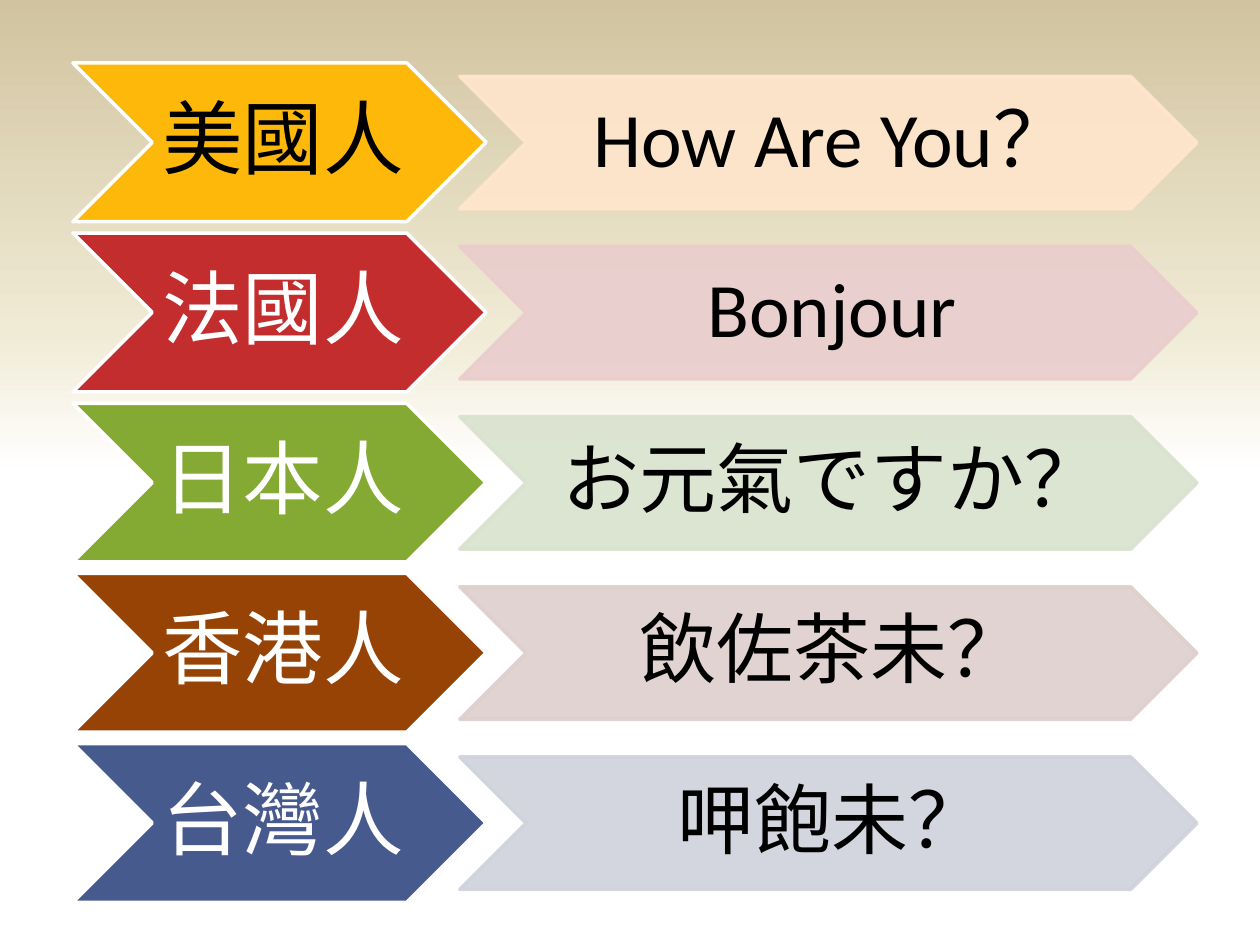
from copy import deepcopy

from pptx import Presentation, util as u
from pptx.dml.color import RGBColor
from pptx.enum import shapes, text
from pptx.oxml.ns import qn
from lxml import etree

HUES = {
    "white": "FFFFFF", "black": "000000", "cream": "F0EBD5", "sand": "D1C39F",
    "gold": "FEB80A", "peach": "FFE6CC", "red": "C32D2E", "rose": "E9CDCD",
    "green": "84AA33", "sage": "D9E2CE", "brown": "964305", "taupe": "DDCFCC",
    "blue": "475A8D", "mist": "CFD2DB",
}
ROWS = [
    ("美國人", "gold", "black", "How Are You？", "peach"),
    ("法國人", "red", "white", "Bonjour", "rose"),
    ("日本人", "green", "white", "お元氣ですか？", "sage"),
    ("香港人", "brown", "white", "飲佐茶未？", "taupe"),
    ("台灣人", "blue", "white", "呷飽未？", "mist"),
]


def rgb(name):
    return RGBColor.from_string(HUES[name])


def arrow(box, words, size, ink, fill, edge, alpha=None):
    """Add a chevron with centred text; alpha is the opacity in percent."""
    item = slide.shapes.add_shape(shapes.MSO_SHAPE.CHEVRON, *map(u.Cm, box))
    item.shadow.inherit = False
    item.fill.solid()
    item.fill.fore_color.rgb = rgb(fill)
    item.line.color.rgb = rgb(edge)
    item.line.width = u.Pt(2)
    if alpha:
        for tone in item.element.spPr.iter(qn("a:srgbClr")):
            etree.SubElement(tone, qn("a:alpha"), val=str(alpha * 1000))
    frame = item.text_frame
    frame.word_wrap = True
    frame.vertical_anchor = text.MSO_ANCHOR.MIDDLE
    frame.margin_left, frame.margin_right = u.Cm(0.15), 0
    frame.margin_top = frame.margin_bottom = u.Cm(0.08)
    para = frame.paragraphs[0]
    para.alignment = text.PP_ALIGN.CENTER
    para.line_spacing = 0.9
    run = para.add_run()
    run.text = words
    run.font.name = "Calibri"
    run.font.size = u.Pt(size)
    run.font.color.rgb = rgb(ink)


deck = Presentation()
deck.slide_width, deck.slide_height = u.Cm(25.4), u.Cm(19.05)
slide = deck.slides.add_slide(deck.slide_layouts[6])

# Background: white lower half, fading to sand at the top
back = slide.background.fill
back.gradient()
back.gradient_angle = 90
stops = next(slide.element.iter(qn("a:gsLst")))
stops.append(deepcopy(stops[-1]))
fade = [(0.5, "white"), (0.65, "cream"), (1, "sand")]
for stop, (place, hue) in zip(back.gradient_stops, fade):
    stop.position = place
    stop.color.rgb = rgb(hue)

# One row per people: name on the left, greeting on the right
for i, (name, dark, ink, hello, pale) in enumerate(ROWS):
    top = 1.27 + i * 3.43
    arrow((1.47, top, 8.33, 3.2), name, 46, ink, dark, "white")
    arrow((9.27, top + 0.27, 14.86, 2.67), hello, 44, "black", pale, pale, 90)

deck.save("out.pptx")
